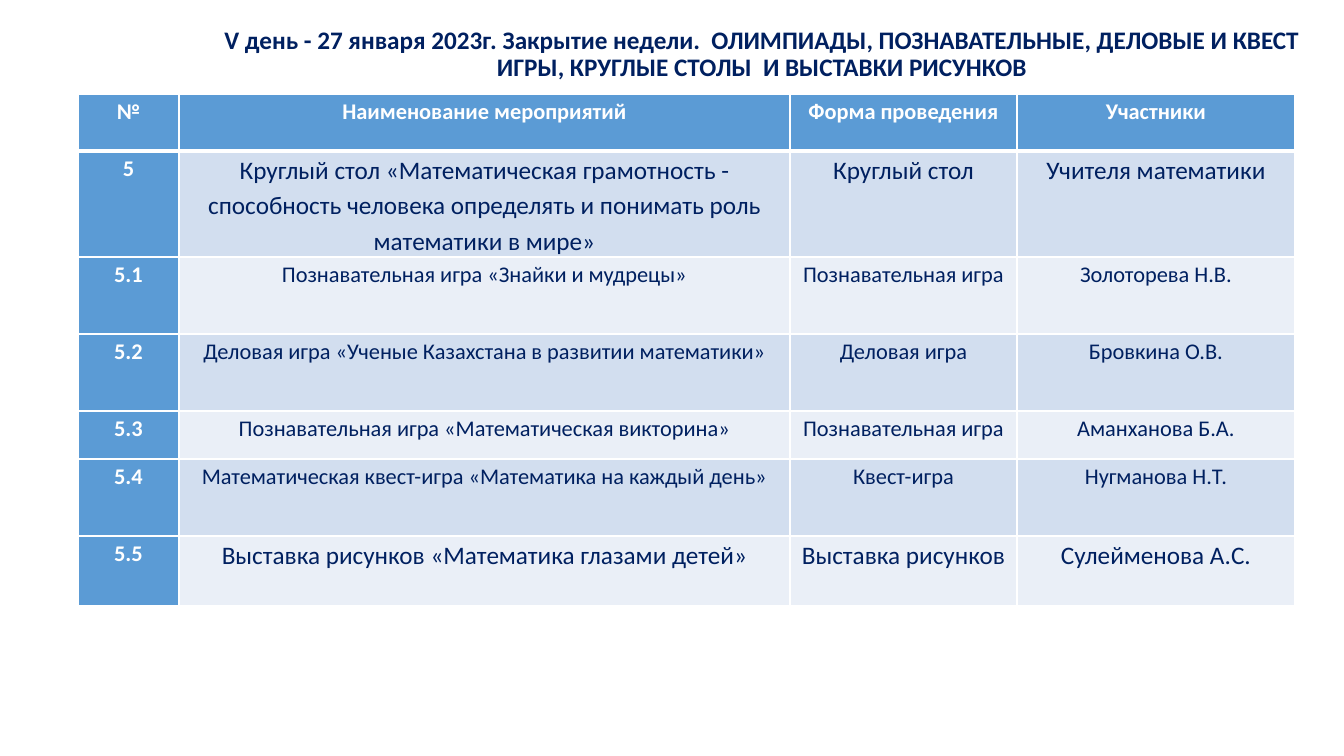
from lxml import etree
from pptx import Presentation
from pptx.dml.color import RGBColor
from pptx.enum.text import MSO_ANCHOR, PP_ALIGN
from pptx.oxml.ns import qn
from pptx.util import Pt

CENTER, MIDDLE = PP_ALIGN.CENTER, MSO_ANCHOR.MIDDLE
SLIDE_W, SLIDE_H = 1344, 756
EMU_PER_PX = 12192000 / SLIDE_W
COLORS = {"navy": "002060", "white": "FFFFFF", "blue": "5B9BD5",
          "odd": "D2DEEF", "even": "EAEFF7"}


def px(length):
    return round(length * EMU_PER_PX)


def style_text(paragraph, size, color, bold, line_spacing):
    paragraph.alignment = CENTER
    paragraph.line_spacing = line_spacing
    for run in paragraph.runs:
        run.font.name = "Calibri"
        run.font.size = Pt(size)
        run.font.bold = bold
        run.font.color.rgb = RGBColor.from_string(COLORS[color])


prs = Presentation()
prs.slide_width, prs.slide_height = px(SLIDE_W), px(SLIDE_H)
slide = prs.slides.add_slide(prs.slide_layouts[6])

# Heading
heading = slide.shapes.add_textbox(px(211), px(30), px(1102), px(49)).text_frame
heading.word_wrap = True
heading.vertical_anchor = MIDDLE
heading.text = ("V день - 27 января 2023г. Закрытие недели.  ОЛИМПИАДЫ, ПОЗНАВАТЕЛЬНЫЕ, "
                "ДЕЛОВЫЕ И КВЕСТ ИГРЫ, КРУГЛЫЕ СТОЛЫ  И ВЫСТАВКИ РИСУНКОВ")
style_text(heading.paragraphs[0], 18, "navy", True, 0.9)

# Programme: row height, text size, cells
programme = [
    (57, 16, ["№", "Наименование мероприятий", "Форма проведения", "Участники"]),
    (106, 18, ["5", "Круглый стол «Математическая грамотность - способность человека "
               "определять и понимать роль математики в мире»",
               "Круглый стол", "Учителя математики"]),
    (77, 16, ["5.1", "Познавательная игра «Знайки и мудрецы»",
              "Познавательная игра", "Золоторева Н.В."]),
    (77, 16, ["5.2", "Деловая игра «Ученые Казахстана в развитии математики»",
              "Деловая игра", "Бровкина О.В."]),
    (48, 16, ["5.3", "Познавательная игра «Математическая викторина»",
              "Познавательная игра", "Аманханова Б.А."]),
    (77, 16, ["5.4", "Математическая квест-игра «Математика на каждый день»",
              "Квест-игра", "Нугманова Н.Т."]),
    (70, 18, ["5.5", "Выставка рисунков «Математика глазами детей»",
              "Выставка рисунков", "Сулейменова А.С."]),
]
column_widths = [101, 611, 227, 278]
table = slide.shapes.add_table(
    len(programme), len(column_widths), px(78), px(94),
    px(sum(column_widths)), px(sum(height for height, _, _ in programme))).table
for column, width in zip(table.columns, column_widths):
    column.width = px(width)

for r, (height, size, entries) in enumerate(programme):
    table.rows[r].height = px(height)
    for c, entry in enumerate(entries):
        cell = table.cell(r, c)
        is_header = r == 0 or c == 0
        cell.margin_left = cell.margin_right = px(7)
        cell.margin_top = cell.margin_bottom = 0
        cell.text = entry
        paragraph = cell.text_frame.paragraphs[0]
        paragraph.space_after = Pt(10)
        style_text(paragraph, 16 if is_header else size,
                   "white" if is_header else "navy", is_header, 1.15)
        fill = "blue" if is_header else "odd" if r % 2 else "even"
        cell.fill.solid()
        cell.fill.fore_color.rgb = RGBColor.from_string(COLORS[fill])

        # White borders, thick under the header row
        thick_side = {0: "lnB", 1: "lnT"}.get(r)
        for i, side in enumerate(["lnL", "lnR", "lnT", "lnB"]):
            border = etree.Element(qn("a:" + side), w=str(Pt(3 if side == thick_side else 1)))
            line_fill = etree.SubElement(border, qn("a:solidFill"))
            etree.SubElement(line_fill, qn("a:srgbClr"), val=COLORS["white"])
            cell._tc.tcPr.insert(i, border)

prs.save("out.pptx")
